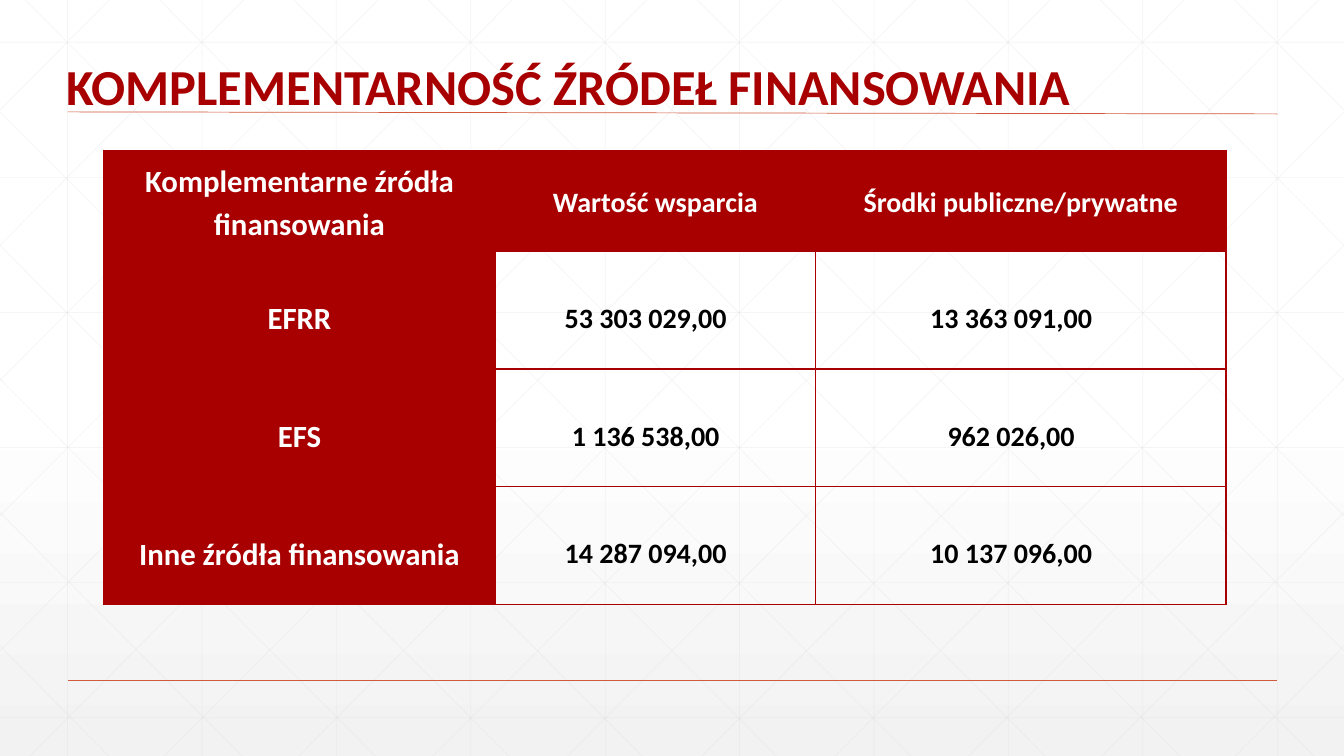
import copy
from dataclasses import dataclass

import pptx
import pptx.dml.color
import pptx.enum.shapes
import pptx.enum.text
import pptx.oxml
import pptx.oxml.ns
import pptx.util
from pptx.util import Inches

COLORS = {
    "red": "A80000",
    "rule": "D15A3E",
    "grid": "D9D9D9",
    "white": "FFFFFF",
    "black": "000000",
    "pale": "F2F2F2",
}
FONT = "Calibri"
WIDTH, HEIGHT = 13.33, 7.5
STEP = 1.333
qn = pptx.oxml.ns.qn


@dataclass
class Line:
    x1: float
    y1: float
    x2: float
    y2: float
    color: str = "grid"
    width: float = 0.5
    alpha: int = 25

    def mirrored(self) -> "Line":
        return Line(WIDTH - self.x1, self.y1, WIDTH - self.x2, self.y2)


@dataclass
class CellStyle:
    size: int
    color: str
    spacing: float
    filled: bool = True
    after: int = 0
    right: float = 0.07


CORNER = CellStyle(22, "white", 1.15)
HEADER = CellStyle(20, "white", 1.15)
LABEL = CellStyle(22, "white", 1.5)
AMOUNT = CellStyle(20, "black", 1.5, filled=False, after=8, right=0.26)

ROWS = [
    ["Komplementarne źródła finansowania", "Wartość wsparcia", "Środki publiczne/prywatne"],
    ["EFRR", "53 303 029,00", "13 363 091,00"],
    ["EFS", "1 136 538,00", "962 026,00"],
    ["Inne źródła finansowania", "14 287 094,00", "10 137 096,00"],
]
COL_WIDTHS = [3.88, 3.18, 4.07]
ROW_HEIGHTS = [1, 1.17, 1.17, 1.17]


def rgb(name: str) -> pptx.dml.color.RGBColor:
    return pptx.dml.color.RGBColor.from_string(COLORS[name])


def set_background(s) -> None:
    fill = s.background.fill
    fill.gradient()
    fill.gradient_angle = 270
    stops = s.element.find(".//" + qn("a:gsLst"))
    stops.append(copy.deepcopy(stops[-1]))
    for stop, position, name in zip(fill.gradient_stops, (0, 0.53, 1), ("white", "white", "pale")):
        stop.position = position
        stop.color.rgb = rgb(name)


def add_line(s, line: Line) -> None:
    c = s.shapes.add_connector(
        pptx.enum.shapes.MSO_CONNECTOR.STRAIGHT,
        Inches(line.x1), Inches(line.y1), Inches(line.x2), Inches(line.y2),
    )
    c.line.color.rgb = rgb(line.color)
    c.line.width = pptx.util.Pt(line.width)
    if line.alpha < 100:
        color = c.element.find(".//" + qn("a:srgbClr"))
        pptx.oxml.xmlchemy.OxmlElement("a:alpha")
        alpha = color.makeelement(qn("a:alpha"), {"val": str(line.alpha * 1000)})
        color.append(alpha)
    sp_pr = c.element.spPr
    sp_pr.append(sp_pr.makeelement(qn("a:effectLst"), {}))


def grid_lines() -> list[Line]:
    lines = [Line(0.67 + STEP * i, 0, 0.67 + STEP * i, HEIGHT) for i in range(10)]
    lines += [Line(0, 0.42 + 1.34 * i, WIDTH, 0.42 + 1.34 * i) for i in range(6)]
    # Diagonals from the top edge stop at the bottom or right edge
    diagonals = []
    for i in range(10):
        x = 0.25 + STEP * i
        run = min(7.45, WIDTH - x)
        diagonals.append(Line(x, 0, x + run, run * HEIGHT / 7.45))
    # Diagonals from the left edge run to the bottom edge
    diagonals += [Line(0, 1.11 + 1.325 * i, 6.37 - 1.323 * i, HEIGHT) for i in range(5)]
    return lines + diagonals + [d.mirrored() for d in diagonals]


def format_run(r, size: int, color: str) -> None:
    r.font.name = FONT
    r.font.size = pptx.util.Pt(size)
    r.font.bold = True
    r.font.color.rgb = rgb(color)


def add_borders(cell) -> None:
    tc_pr = cell._tc.get_or_add_tcPr()
    for i, side in enumerate(("lnL", "lnR", "lnT", "lnB")):
        tc_pr.insert(i, pptx.oxml.parse_xml(
            f'<a:{side} {pptx.oxml.ns.nsdecls("a")} w="12700"><a:solidFill>'
            f'<a:srgbClr val="{COLORS["red"]}"/></a:solidFill></a:{side}>'
        ))


def fill_cell(cell, text: str, style: CellStyle) -> None:
    cell.text_frame.text = text
    cell.vertical_anchor = pptx.enum.text.MSO_ANCHOR.MIDDLE
    cell.margin_left, cell.margin_right = Inches(0.07), Inches(style.right)
    cell.margin_top = cell.margin_bottom = 0
    p = cell.text_frame.paragraphs[0]
    p.alignment = pptx.enum.text.PP_ALIGN.CENTER
    p.line_spacing = style.spacing
    p.space_after = pptx.util.Pt(style.after)
    format_run(p.runs[0], style.size, style.color)
    if style.filled:
        cell.fill.solid()
        cell.fill.fore_color.rgb = rgb("red")
    else:
        cell.fill.background()
    add_borders(cell)


def style_for(row: int, col: int) -> CellStyle:
    if row == 0:
        return HEADER if col else CORNER
    return AMOUNT if col else LABEL


def add_title(s, text: str) -> None:
    sp = s.shapes.add_textbox(Inches(0.56), Inches(0.5), Inches(10.27), Inches(0.71))
    tf = sp.text_frame
    tf.text = text
    tf.word_wrap = False
    tf.auto_size = pptx.enum.text.MSO_AUTO_SIZE.SHAPE_TO_FIT_TEXT
    format_run(tf.paragraphs[0].runs[0], 36, "red")


def add_funding_table(s) -> None:
    table = s.shapes.add_table(
        len(ROWS), len(COL_WIDTHS), Inches(1.03), Inches(1.49),
        Inches(sum(COL_WIDTHS)), Inches(sum(ROW_HEIGHTS)),
    ).table
    table.first_row = table.horz_banding = False
    for column, width in zip(table.columns, COL_WIDTHS):
        column.width = Inches(width)
    for i, (texts, height) in enumerate(zip(ROWS, ROW_HEIGHTS)):
        table.rows[i].height = Inches(height)
        for j, text in enumerate(texts):
            fill_cell(table.cell(i, j), text, style_for(i, j))


def main() -> None:
    prs = pptx.Presentation()
    prs.slide_width, prs.slide_height = Inches(WIDTH), Inches(HEIGHT)
    s = prs.slides.add_slide(prs.slide_layouts[6])

    # Background gradient, grid and rules
    set_background(s)
    rules = [
        Line(0.67, 6.75, 12.67, 6.75, "rule", 1, 100),
        Line(0.67, 1.11, 12.67, 1.13, "rule", 0.5, 100),
    ]
    for line in grid_lines() + rules:
        add_line(s, line)

    # Title and table
    add_title(s, "KOMPLEMENTARNOŚĆ ŹRÓDEŁ FINANSOWANIA")
    add_funding_table(s)
    prs.save("out.pptx")


if __name__ == "__main__":
    main()
